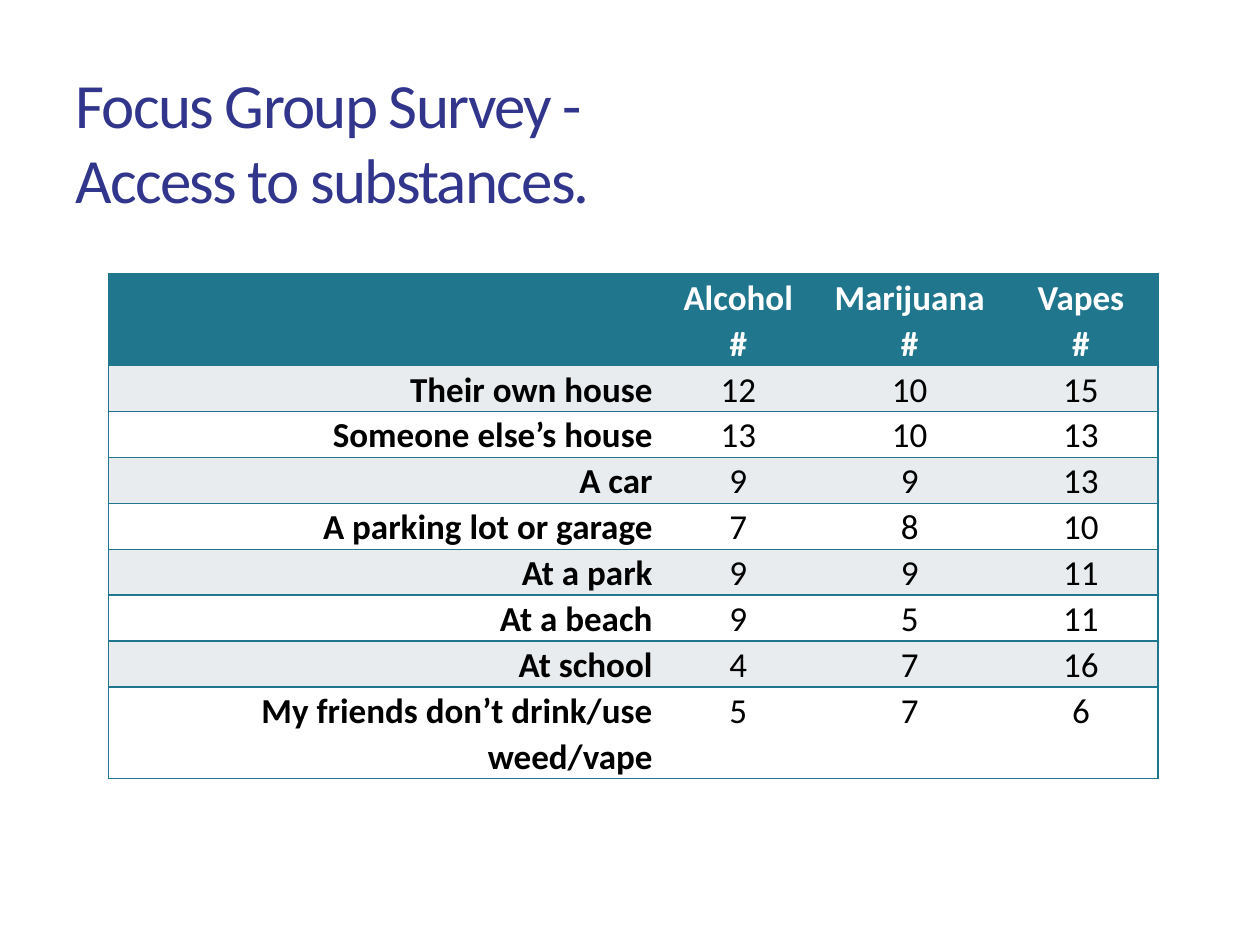
from typing import NamedTuple

from lxml import etree
from pptx import Presentation
from pptx.dml.color import RGBColor
from pptx.enum.text import MSO_ANCHOR, MSO_AUTO_SIZE, PP_ALIGN
from pptx.oxml.ns import qn
from pptx.util import Inches, Pt

LEFT, CENTER, RIGHT = PP_ALIGN.LEFT, PP_ALIGN.CENTER, PP_ALIGN.RIGHT
MIDDLE, NO_FIT = MSO_ANCHOR.MIDDLE, MSO_AUTO_SIZE.NONE
WIDTH, HEIGHT = 10, 7.5
FONT = "Calibri"
TITLE, TEAL, BAND, WHITE, BLACK = "31358C", "20768C", "E8ECEE", "FFFFFF", "000000"
COLUMNS = (4.39, 1.22, 1.5, 1.22)
LINE_HEIGHT = 0.36


class Place(NamedTuple):
    place: str
    alcohol: int
    marijuana: int
    vapes: int


SUBSTANCES = ("Alcohol", "Marijuana", "Vapes")
PLACES = (
    Place("Their own house", 12, 10, 15),
    Place("Someone else’s house", 13, 10, 13),
    Place("A car", 9, 9, 13),
    Place("A parking lot or garage", 7, 8, 10),
    Place("At a park", 9, 9, 11),
    Place("At a beach", 9, 5, 11),
    Place("At school", 4, 7, 16),
    Place("My friends don’t drink/use weed/vape", 5, 7, 6),
)


def rgb(color: str) -> RGBColor:
    return RGBColor.from_string(color)


def add_run(p, text: str, size: float, color: str, bold: bool = False):
    r = p.add_run()
    r.text = text
    r.font.name, r.font.size, r.font.bold = FONT, Pt(size), bold
    r.font.color.rgb = rgb(color)
    return r


def set_borders(cell, col: int) -> None:
    tc_pr = cell._tc.get_or_add_tcPr()
    shown = {"lnL": col == 0, "lnR": col == len(COLUMNS) - 1, "lnT": True, "lnB": True}
    for i, (side, visible) in enumerate(shown.items()):
        ln = etree.Element(qn(f"a:{side}"), w=str(Pt(1)))
        if visible:
            fill = etree.SubElement(ln, qn("a:solidFill"))
            etree.SubElement(fill, qn("a:srgbClr"), val=TEAL)
        else:
            etree.SubElement(ln, qn("a:noFill"))
        tc_pr.insert(i, ln)


def fill_cell(cell, col: int, lines: tuple, fill: str, color: str, bold: bool) -> None:
    cell.margin_left = cell.margin_right = Inches(0.07)
    cell.margin_top = cell.margin_bottom = 0
    cell.fill.solid()
    cell.fill.fore_color.rgb = rgb(fill)
    set_borders(cell, col)
    tf = cell.text_frame
    for i, line in enumerate(lines):
        p = tf.add_paragraph() if i else tf.paragraphs[0]
        p.alignment = CENTER if col else RIGHT
        p.line_spacing = 1.07
        add_run(p, line, 20, color, bold)


def add_title(s, lines: tuple) -> None:
    sp = s.shapes.title
    sp.left, sp.top = Inches(0.05 * WIDTH), Inches(0.077 * HEIGHT)
    sp.width, sp.height = Inches(0.9 * WIDTH), Inches(0.144 * HEIGHT)
    tf = sp.text_frame
    tf.word_wrap, tf.auto_size, tf.vertical_anchor = True, NO_FIT, MIDDLE
    p = tf.paragraphs[0]
    p.alignment = LEFT
    for i, line in enumerate(lines):
        if i:
            p.add_line_break()
        r = add_run(p, line, 36, TITLE)
        r.font._element.set("spc", "-100")


def add_survey(s) -> None:
    row_lines = [2] + [1] * (len(PLACES) - 1) + [2]
    table = s.shapes.add_table(
        len(row_lines), len(COLUMNS), Inches(0.086 * WIDTH), Inches(0.29 * HEIGHT),
        Inches(sum(COLUMNS)), Inches(LINE_HEIGHT * sum(row_lines))).table
    for column, width in zip(table.columns, COLUMNS):
        column.width = Inches(width)
    for row, count in zip(table.rows, row_lines):
        row.height = Inches(LINE_HEIGHT * count)
    header = [()] + [(name, "#") for name in SUBSTANCES]
    for col, lines in enumerate(header):
        fill_cell(table.cell(0, col), col, lines, TEAL, WHITE, True)
    for row, place in enumerate(PLACES, 1):
        for col, value in enumerate(place):
            fill = BAND if row % 2 else WHITE
            fill_cell(table.cell(row, col), col, (str(value),), fill, BLACK, col == 0)


def main() -> None:
    """Build the survey slide."""
    prs = Presentation()
    prs.slide_width, prs.slide_height = Inches(WIDTH), Inches(HEIGHT)
    s = prs.slides.add_slide(prs.slide_layouts[5])
    add_title(s, ("Focus Group Survey - ", "Access to substances."))
    add_survey(s)
    prs.save("out.pptx")


if __name__ == "__main__":
    main()
